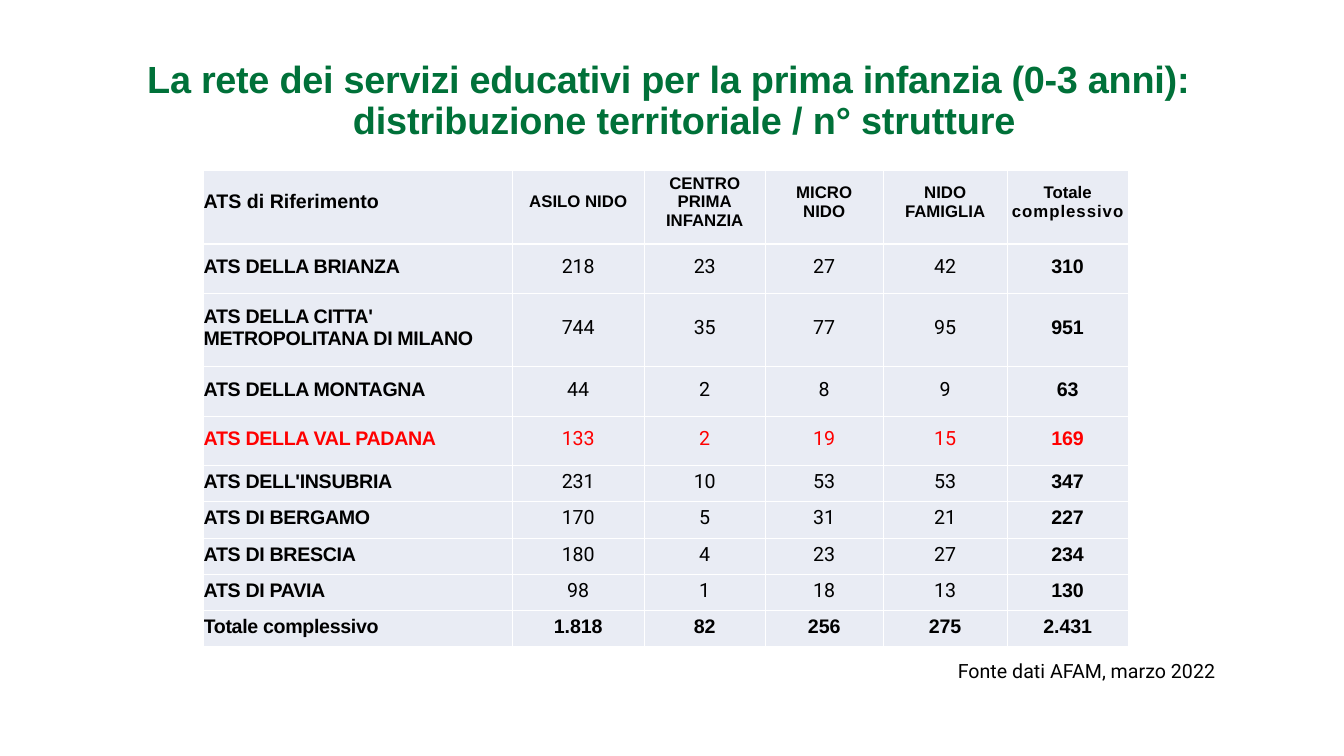
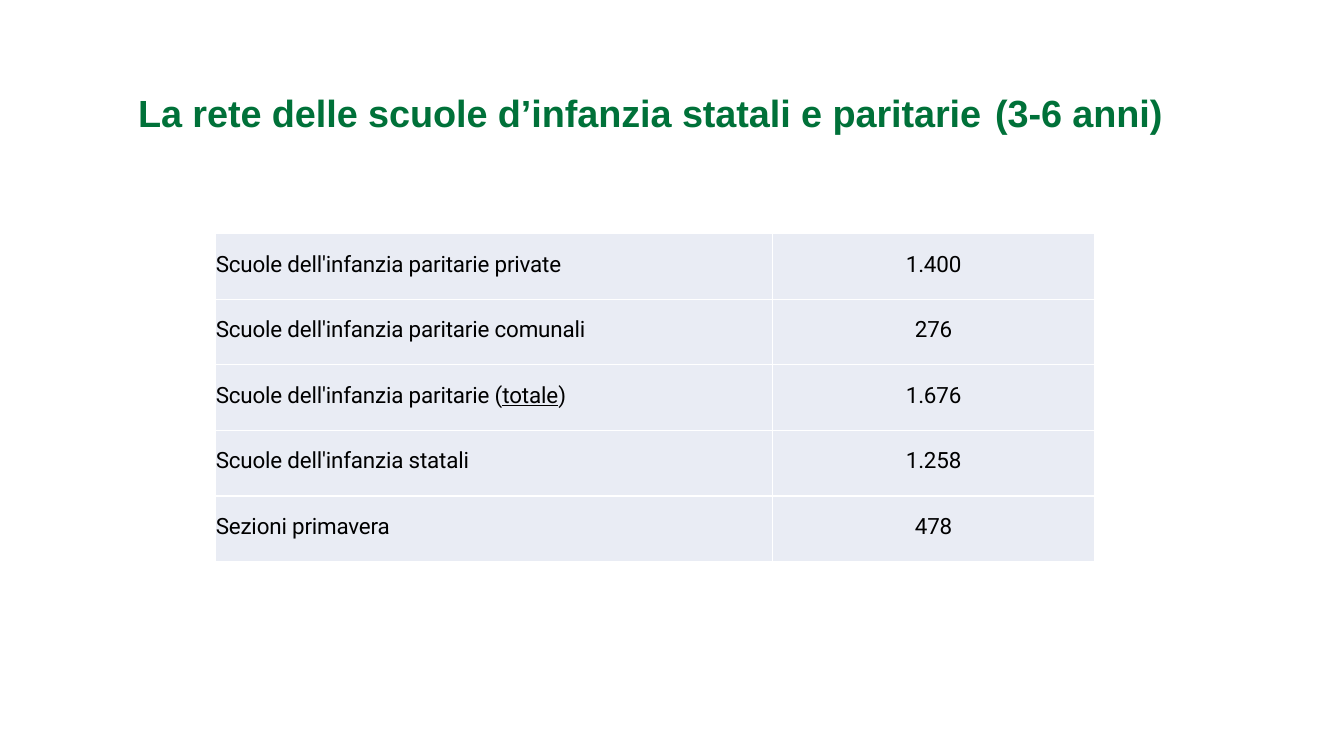
from lxml import etree
from pptx import Presentation
from pptx import util as u
from pptx.dml.color import RGBColor
from pptx.enum import text as t
from pptx.oxml import ns

GREEN, BLACK, RED, WHITE, CELL = "007139", "000000", "FF0000", "FFFFFF", "E9ECF4"
HEADING, BODY = "Arial", "Roboto"
LEFT, CENTER = t.PP_ALIGN.LEFT, t.PP_ALIGN.CENTER

HEADERS = [
    "ATS di Riferimento",
    "ASILO NIDO",
    "CENTRO\nPRIMA\nINFANZIA",
    "MICRO\nNIDO",
    "NIDO\nFAMIGLIA",
    ["Totale\n", ("complessivo", {"spacing": 0.7})],
]
ATS_ROWS = [
    ["ATS DELLA BRIANZA", "218", "23", "27", "42", "310"],
    ["ATS DELLA CITTA'\nMETROPOLITANA DI MILANO", "744", "35", "77", "95", "951"],
    ["ATS DELLA MONTAGNA", "44", "2", "8", "9", "63"],
    ["ATS DELLA VAL PADANA", "133", "2", "19", "15", "169"],
    ["ATS DELL'INSUBRIA", "231", "10", "53", "53", "347"],
    ["ATS DI BERGAMO", "170", "5", "31", "21", "227"],
    ["ATS DI BRESCIA", "180", "4", "23", "27", "234"],
    ["ATS DI PAVIA", "98", "1", "18", "13", "130"],
    ["Totale complessivo", "1.818", "82", "256", "275", "2.431"],
]
HIGHLIGHTED = "ATS DELLA VAL PADANA"
SCHOOL_ROWS = [
    ["Scuole dell'infanzia paritarie private", "1.400"],
    ["Scuole dell'infanzia paritarie comunali", "276"],
    [["Scuole dell'infanzia paritarie (", ("totale", {"underline": True}), ")"], "1.676"],
    ["Scuole dell'infanzia statali", "1.258"],
    ["Sezioni primavera", "478"],
]


def rgb(color):
    return RGBColor.from_string(color)


def format_run(r, size=14, font=BODY, color=BLACK, bold=False, underline=False, spacing=0):
    r.font.size = u.Pt(size)
    r.font.name = font
    r.font.bold = bold
    r.font.underline = underline
    r.font.color.rgb = rgb(color)
    if spacing:
        r.font._element.set("spc", str(round(spacing * 100)))


def write(tf, text, align=LEFT, **style):
    p = tf.paragraphs[0]
    p.alignment = align
    for part in [text] if isinstance(text, str) else text:
        words, extra = (part, {}) if isinstance(part, str) else part
        for i, line in enumerate(words.split("\n")):
            if i:
                p.add_line_break()
            if line:
                r = p.add_run()
                r.text = line
                format_run(r, **{**style, **extra})
    return p


def place(sp, left, top, width, height, margin_top=0):
    sp.left, sp.top = u.Inches(left), u.Inches(top)
    sp.width, sp.height = u.Inches(width), u.Inches(height)
    tf = sp.text_frame
    tf.margin_left = tf.margin_right = tf.margin_bottom = 0
    tf.margin_top = u.Inches(margin_top)
    tf.vertical_anchor = t.MSO_ANCHOR.TOP
    tf.auto_size = t.MSO_AUTO_SIZE.SHAPE_TO_FIT_TEXT
    tf.word_wrap = True
    return tf


def add_title_slide(prs, text, box, margin_top, spacing):
    s = prs.slides.add_slide(prs.slide_layouts[5])
    tf = place(s.shapes.title, *box, margin_top=margin_top)
    p = write(tf, text, size=27, font=HEADING, color=GREEN, bold=True, spacing=spacing)
    return s, p


def set_indent(p, left, first):
    pPr = p._p.get_or_add_pPr()
    pPr.set("marL", str(u.Inches(left)))
    pPr.set("indent", str(u.Inches(first)))


def add_tab_stop(p, position):
    tabs = etree.SubElement(p._p.get_or_add_pPr(), ns.qn("a:tabLst"))
    etree.SubElement(tabs, ns.qn("a:tab"), pos=str(u.Inches(position)), algn="l")


def format_cell(cell, margin_bottom):
    cell.margin_left = cell.margin_right = cell.margin_top = 0
    cell.margin_bottom = u.Inches(margin_bottom)
    cell.vertical_anchor = t.MSO_ANCHOR.MIDDLE
    tcPr = cell._tc.get_or_add_tcPr()
    for side in ("lnL", "lnR", "lnT", "lnB"):
        ln = etree.SubElement(tcPr, ns.qn(f"a:{side}"), w=str(u.Pt(1)))
        fill = etree.SubElement(ln, ns.qn("a:solidFill"))
        etree.SubElement(fill, ns.qn("a:srgbClr"), val=WHITE)
    cell.fill.solid()
    cell.fill.fore_color.rgb = rgb(CELL)


def add_table(s, rows, left, top, widths, heights, style):
    frame = s.shapes.add_table(len(rows), len(widths), u.Inches(left), u.Inches(top),
                               u.Inches(sum(widths)), u.Inches(sum(heights)))
    table = frame.table
    table.first_row = table.horz_banding = False
    for column, width in zip(table.columns, widths):
        column.width = u.Inches(width)
    for i, (row, height) in enumerate(zip(rows, heights)):
        table.rows[i].height = u.Inches(height)
        for j, text in enumerate(row):
            cell = table.cell(i, j)
            cell_style = style(i, j)
            format_cell(cell, cell_style.pop("margin_bottom", 0.04))
            write(cell.text_frame, text, align=CENTER if j else LEFT, **cell_style)


def ats_style(i, j):
    if i == 0:
        return dict(font=HEADING, bold=True, size=12 if j else 14, margin_bottom=0.1)
    strong = j in (0, len(HEADERS) - 1) or i == len(ATS_ROWS)
    return dict(font=HEADING if strong else BODY, bold=strong,
                color=RED if ATS_ROWS[i - 1][0] == HIGHLIGHTED else BLACK,
                spacing=-0.1 if j else -0.25)


def school_style(i, j):
    return dict(size=16, spacing=-0.1)


def add_services_slide(prs):
    s, p = add_title_slide(
        prs,
        ["La rete dei servizi educativi per la prima infanzia (0-3 anni):\n",
         ("distribuzione territoriale / n° strutture", {"spacing": -0.1})],
        (1.45, 0.54, 10.6, 0.88), margin_top=0.06, spacing=-0.2)
    set_indent(p, 2.05, -2.04)
    p.line_spacing = u.Pt(29.2)
    add_table(s, [HEADERS] + ATS_ROWS, 2.02, 1.69,
              [3.06, 1.31, 1.2, 1.17, 1.23, 1.2],
              [0.73, 0.49, 0.73, 0.49, 0.49] + [0.36] * 5, ats_style)
    source = s.shapes.add_textbox(0, 0, 0, 0)
    write(place(source, 9.5, 6.53, 2.7, 0.26, margin_top=0.01), "Fonte dati AFAM, marzo 2022")


def add_schools_slide(prs):
    s, p = add_title_slide(
        prs, "La rete delle scuole d’infanzia statali e paritarie\t(3-6 anni)",
        (1.36, 0.88, 10.4, 0.48), margin_top=0.01, spacing=-0.05)
    set_indent(p, 0.01, 0)
    add_tab_stop(p, 8.62)
    add_table(s, SCHOOL_ROWS, 2.14, 2.32, [5.52, 3.2], [0.65] * len(SCHOOL_ROWS), school_style)


def main():
    prs = Presentation()
    prs.slide_width, prs.slide_height = u.Inches(13.33), u.Inches(7.5)
    add_services_slide(prs)
    add_schools_slide(prs)
    prs.save("out.pptx")


if __name__ == "__main__":
    main()
